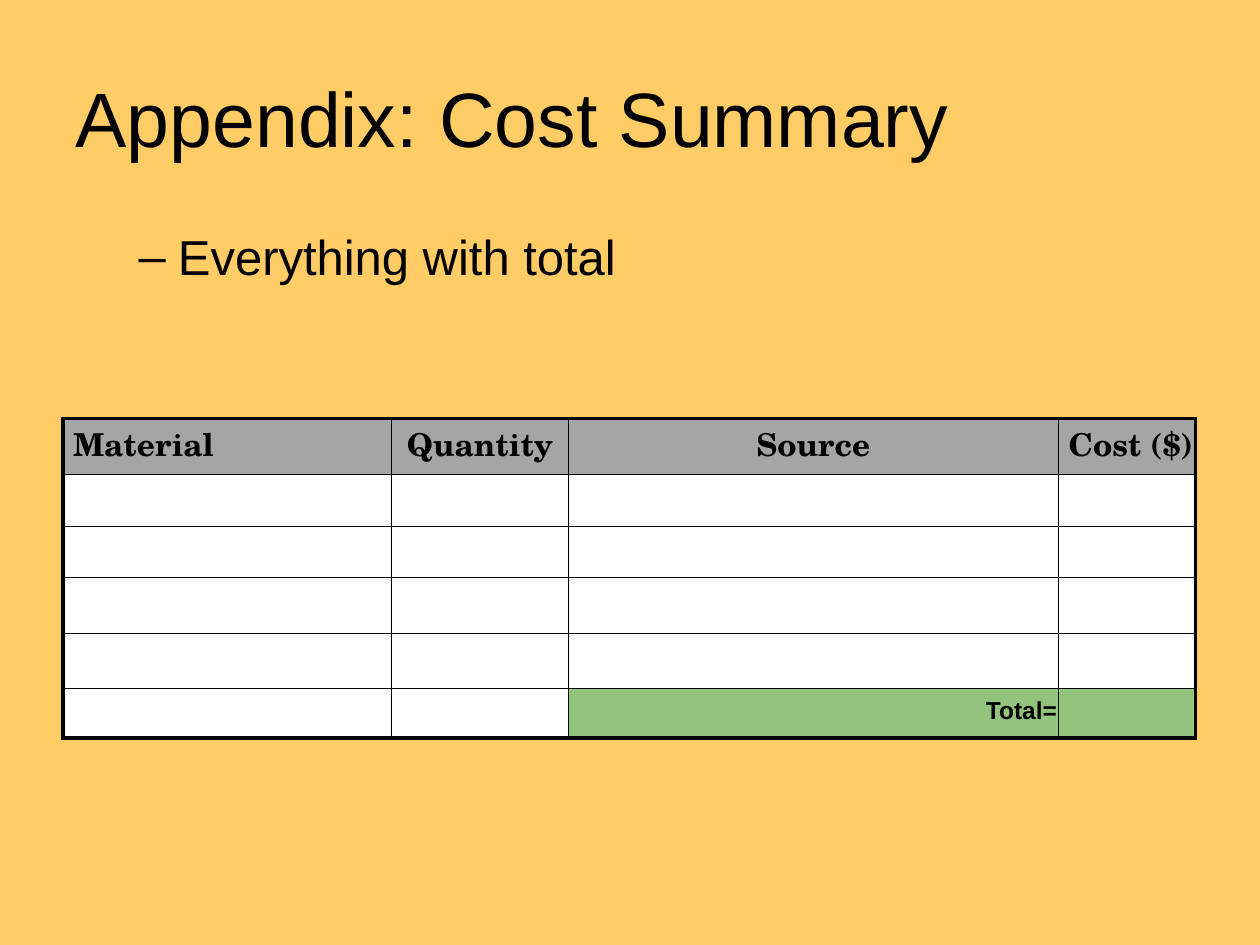
from dataclasses import dataclass

from lxml.etree import SubElement
from pptx import Presentation
from pptx.dml.color import RGBColor as RGB
from pptx.enum.text import MSO_ANCHOR as ANCHOR, PP_ALIGN as ALIGN
from pptx.oxml.ns import qn
from pptx.util import Inches, Pt

TITLE = "Appendix: Cost Summary"
BULLET = "Everything with total"
HEADERS = [
    (" Material", ALIGN.LEFT),
    ("Quantity", ALIGN.CENTER),
    ("Source", ALIGN.CENTER),
    (" Cost ($)", ALIGN.LEFT),
]
TOTAL = "Total="
TOTAL_COL = 2
COL_WIDTHS = [2.61, 1.4, 3.89, 1.09]
ROW_HEIGHTS = [0.44, 0.41, 0.41, 0.44, 0.44, 0.39]


@dataclass(frozen=True)
class Theme:
    background: str = "FFCC66"
    ink: str = "000000"
    header: str = "A5A5A5"
    body: str = "FFFFFF"
    total: str = "93C47D"
    sans: str = "Arial"
    serif: str = "TeX Gyre Schola"
    title_size: int = 44
    bullet_size: int = 28
    header_size: int = 18
    total_size: int = 14
    frame: float = 2.25
    rule: float = 0.75


T = Theme()


def place(shape, left, top, width, height):
    shape.left, shape.top = Inches(left), Inches(top)
    shape.width, shape.height = Inches(width), Inches(height)


def add_run(p, text, font, size, bold=False):
    r = p.add_run()
    r.text = text
    r.font.name, r.font.size, r.font.bold = font, Pt(size), bold
    r.font.color.rgb = RGB.from_string(T.ink)


def set_borders(cell, widths):
    tcPr = cell._tc.get_or_add_tcPr()
    for i, (side, width) in enumerate(widths.items()):
        ln = tcPr.makeelement(qn(f"a:ln{side}"), {"w": str(Pt(width))})
        fill = SubElement(ln, qn("a:solidFill"))
        SubElement(fill, qn("a:srgbClr"), val=T.ink)
        tcPr.insert(i, ln)


def style_cell(cell, row, col):
    last_row, last_col = len(ROW_HEIGHTS) - 1, len(COL_WIDTHS) - 1
    if row == 0:
        color = T.header
    elif row == last_row and col >= TOTAL_COL:
        color = T.total
    else:
        color = T.body
    cell.fill.solid()
    cell.fill.fore_color.rgb = RGB.from_string(color)
    cell.margin_left = cell.margin_right = cell.margin_top = Inches(0.01)
    cell.margin_bottom = Inches(0.05)
    outer = {"L": col == 0, "R": col == last_col, "T": row == 0, "B": row == last_row}
    set_borders(cell, {k: T.frame if v else T.rule for k, v in outer.items()})


def fill_cell(cell, text, align, anchor, font, size):
    cell.vertical_anchor = anchor
    p = cell.text_frame.paragraphs[0]
    p.alignment = align
    add_run(p, text, font, size, True)


def add_cost_table(slide):
    rows, cols = len(ROW_HEIGHTS), len(COL_WIDTHS)
    table = slide.shapes.add_table(
        rows, cols, Inches(0.5), Inches(3.32),
        Inches(sum(COL_WIDTHS)), Inches(sum(ROW_HEIGHTS))).table
    for column, width in zip(table.columns, COL_WIDTHS):
        column.width = Inches(width)
    for row, height in zip(table.rows, ROW_HEIGHTS):
        row.height = Inches(height)
    for row in range(rows):
        for col in range(cols):
            style_cell(table.cell(row, col), row, col)
    for col, (text, align) in enumerate(HEADERS):
        fill_cell(table.cell(0, col), text, align, ANCHOR.BOTTOM, T.serif, T.header_size)
    fill_cell(table.cell(rows - 1, TOTAL_COL), TOTAL, ALIGN.RIGHT, ANCHOR.MIDDLE,
              T.sans, T.total_size)


def main():
    prs = Presentation()
    prs.slide_width, prs.slide_height = Inches(10), Inches(7.5)
    slide = prs.slides.add_slide(prs.slide_layouts[1])
    slide.background.fill.solid()
    slide.background.fill.fore_color.rgb = RGB.from_string(T.background)

    title, body = slide.placeholders
    place(title, 0.5, 0.3, 9, 1.25)
    title.text_frame.vertical_anchor = ANCHOR.MIDDLE
    p = title.text_frame.paragraphs[0]
    p.alignment = ALIGN.LEFT
    add_run(p, TITLE, T.sans, T.title_size)

    place(body, 0.5, 1.75, 9, 4.95)
    p = body.text_frame.paragraphs[0]
    p.level = 1
    add_run(p, BULLET, T.sans, T.bullet_size)

    add_cost_table(slide)
    prs.save("out.pptx")


if __name__ == "__main__":
    main()
